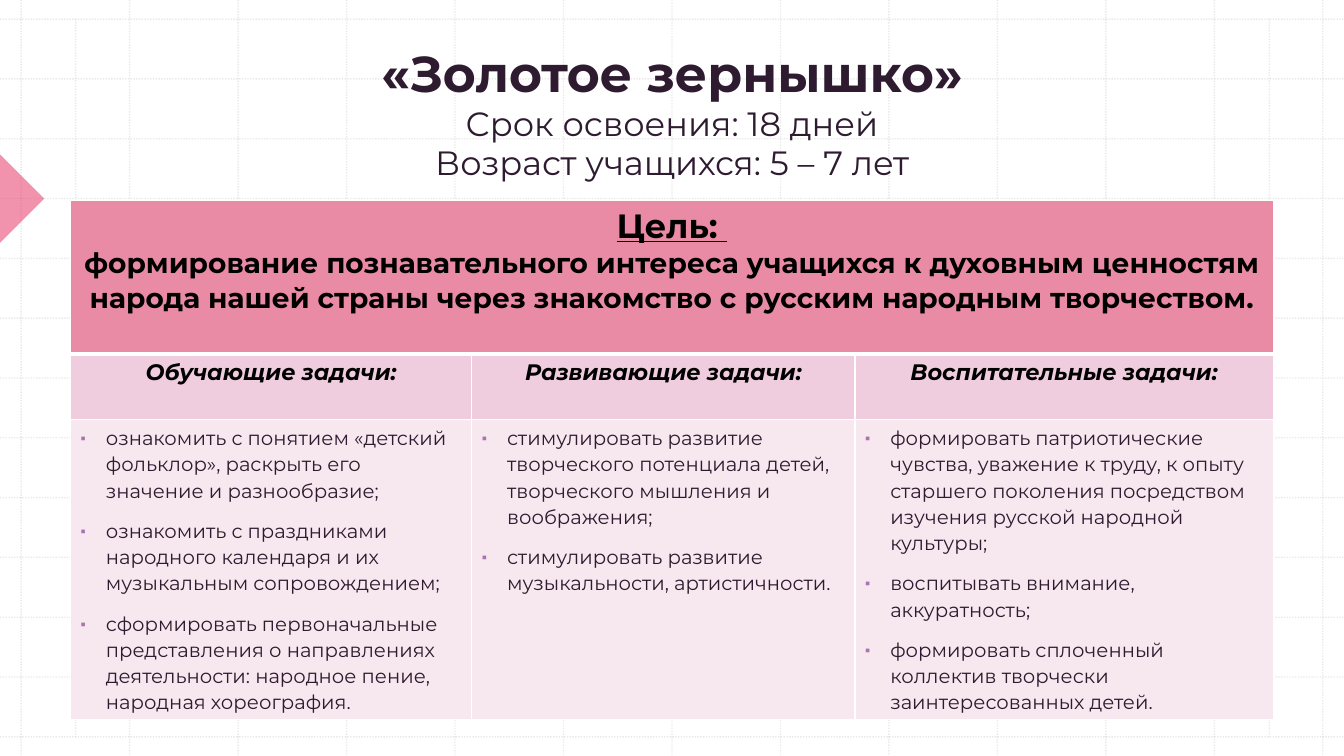
"""Builds the «Золотое зернышко» programme slide with its goal and tasks table."""
from lxml import etree
from pptx import Presentation
from pptx.dml.color import RGBColor
from pptx.enum.dml import MSO_LINE
from pptx.enum.shapes import MSO_CONNECTOR, MSO_SHAPE
from pptx.enum.text import MSO_ANCHOR, MSO_AUTO_SIZE, PP_ALIGN
from pptx.oxml import parse_xml
from pptx.oxml.ns import nsdecls, qn
from pptx.util import Inches, Pt

BLACK = RGBColor(0x00, 0x00, 0x00)
WHITE = RGBColor(0xFF, 0xFF, 0xFF)
PLUM = RGBColor(0x2E, 0x1B, 0x30)
GRID = RGBColor(0xBC, 0xBC, 0xBC)
CRIMSON = RGBColor(0xE7, 0x29, 0x5E)
LILAC = RGBColor(0xAB, 0x74, 0xB1)
ROSE = RGBColor(0xEA, 0x8B, 0xA5)
PINK = RGBColor(0xEF, 0xCC, 0xDE)
PALE = RGBColor(0xF7, 0xE8, 0xEF)

GOAL = ("формирование познавательного интереса учащихся к духовным ценностям "
        "народа нашей страны через знакомство с русским народным творчеством.")
TASKS = [
    ("Обучающие задачи:", 3.98, [
        "ознакомить с понятием «детский фольклор», раскрыть его значение и разнообразие;",
        "ознакомить с праздниками народного календаря и их музыкальным сопровождением;",
        "сформировать первоначальные представления о направлениях деятельности: "
        "народное пение, народная хореография."]),
    ("Развивающие задачи:", 3.8, [
        "стимулировать развитие творческого потенциала детей, творческого мышления и воображения;",
        "стимулировать развитие музыкальности, артистичности."]),
    ("Воспитательные задачи:", 4.15, [
        "формировать патриотические чувства, уважение к труду, к опыту старшего поколения "
        "посредством изучения русской народной культуры;",
        "воспитывать внимание, аккуратность;",
        "формировать сплоченный коллектив творчески заинтересованных детей."]),
]


def add_text(tf, text, size, color=PLUM, bold=False, italic=False, underline=False,
             align=PP_ALIGN.CENTER, bullet=False):
    p = tf.paragraphs[-1]
    if p.runs:
        p = tf.add_paragraph()
    p.alignment = align
    r = p.add_run()
    r.text = text
    r.font.name = "Montserrat"
    r.font.size = Pt(size)
    r.font.color.rgb = color
    r.font.bold, r.font.italic, r.font.underline = bold, italic, underline
    if bullet:
        p.line_spacing = 1.1
        p.space_before = Pt(10)
        pPr = p._p.get_or_add_pPr()
        pPr.set("marL", str(Inches(0.25)))
        pPr.set("indent", str(Inches(-0.25)))
        color_xml = etree.SubElement(pPr, qn("a:buClr"))
        etree.SubElement(color_xml, qn("a:srgbClr"), val=str(LILAC))
        etree.SubElement(pPr, qn("a:buSzPct"), val="75000")
        etree.SubElement(pPr, qn("a:buFont"), typeface="Arial")
        etree.SubElement(pPr, qn("a:buChar"), char="▪")
    return p


def set_opacity(fill, percent):
    color = fill._xPr.find(".//" + qn("a:srgbClr"))
    etree.SubElement(color, qn("a:alpha"), val=str(percent * 1000))


prs = Presentation()
prs.slide_width, prs.slide_height = Inches(13.33), Inches(7.5)
s = prs.slides.add_slide(prs.slide_layouts[5])
s.background.fill.solid()
s.background.fill.fore_color.rgb = WHITE

grid = [(0.21 + 12.91 / 12 * i, 0, 0.21 + 12.91 / 12 * i, 7.5) for i in range(13)]
grid += [(0, 0.19 + 7.12 / 12 * i, 13.33, 0.19 + 7.12 / 12 * i) for i in range(13)]
grid += [(x, 0.19, x, 7.31) for x in (0.75, 12.59)]
for ends in grid:
    line = s.shapes.add_connector(MSO_CONNECTOR.STRAIGHT, *[Inches(v) for v in ends])
    line.line.color.rgb = GRID
    line.line.width = Pt(1)
    line.line.dash_style = MSO_LINE.ROUND_DOT
    set_opacity(line.line.fill, 30)
    etree.SubElement(line._element.spPr, qn("a:effectLst"))

marker = s.shapes.add_shape(MSO_SHAPE.RIGHT_TRIANGLE, Inches(-0.31), Inches(1.66),
                            Inches(0.62), Inches(0.62))
marker.rotation = 225
marker.shadow.inherit = False
marker.fill.solid()
marker.fill.fore_color.rgb = CRIMSON
set_opacity(marker.fill, 50)
marker.line.fill.background()

table = s.shapes.add_table(3, 3, Inches(0.7), Inches(1.99), Inches(11.93), Inches(5.15)).table
for row, height in zip(table.rows, (1.52, 0.65, 2.98)):
    row.height = Inches(height)
for col, (heading, width, tasks) in enumerate(TASKS):
    table.columns[col].width = Inches(width)
    add_text(table.cell(1, col).text_frame, heading, 16, BLACK, bold=True, italic=True)
    for task in tasks:
        add_text(table.cell(2, col).text_frame, task, 14, align=PP_ALIGN.LEFT, bullet=True)
table.cell(0, 0).merge(table.cell(0, 2))
goal = table.cell(0, 0).text_frame
add_text(goal, "Цель: ", 24, BLACK, bold=True, underline=True)
add_text(goal, GOAL, 20, BLACK, bold=True)

for row, color in enumerate((ROSE, PINK, PALE)):
    for col in range(3):
        cell = table.cell(row, col)
        cell.fill.solid()
        cell.fill.fore_color.rgb = color
        for i, side in enumerate("LRTB"):
            thick = (row, side) in ((0, "B"), (1, "T"))
            cell._tc.get_or_add_tcPr().insert(i, parse_xml(
                f'<a:ln{side} {nsdecls("a")} w="{Pt(3 if thick else 1)}"><a:solidFill>'
                f'<a:srgbClr val="{WHITE}"/></a:solidFill></a:ln{side}>'))

title = s.shapes.title
title.left, title.top, title.width, title.height = [Inches(v) for v in (1.02, -0.15, 11.29, 2.74)]
title.element.getparent().append(title.element)
tf = title.text_frame
tf.word_wrap = True
tf.auto_size = MSO_AUTO_SIZE.NONE
tf.vertical_anchor = MSO_ANCHOR.BOTTOM
tf.margin_bottom = Inches(0.77)
for text, size in (("«Золотое зернышко»", 36), ("Срок освоения: 18 дней", 24),
                   ("Возраст учащихся: 5 – 7 лет", 24)):
    p = add_text(tf, text, size, bold=size == 36)
    p.line_spacing = 0.98
    p.space_before = Pt(0)

prs.save("out.pptx")
